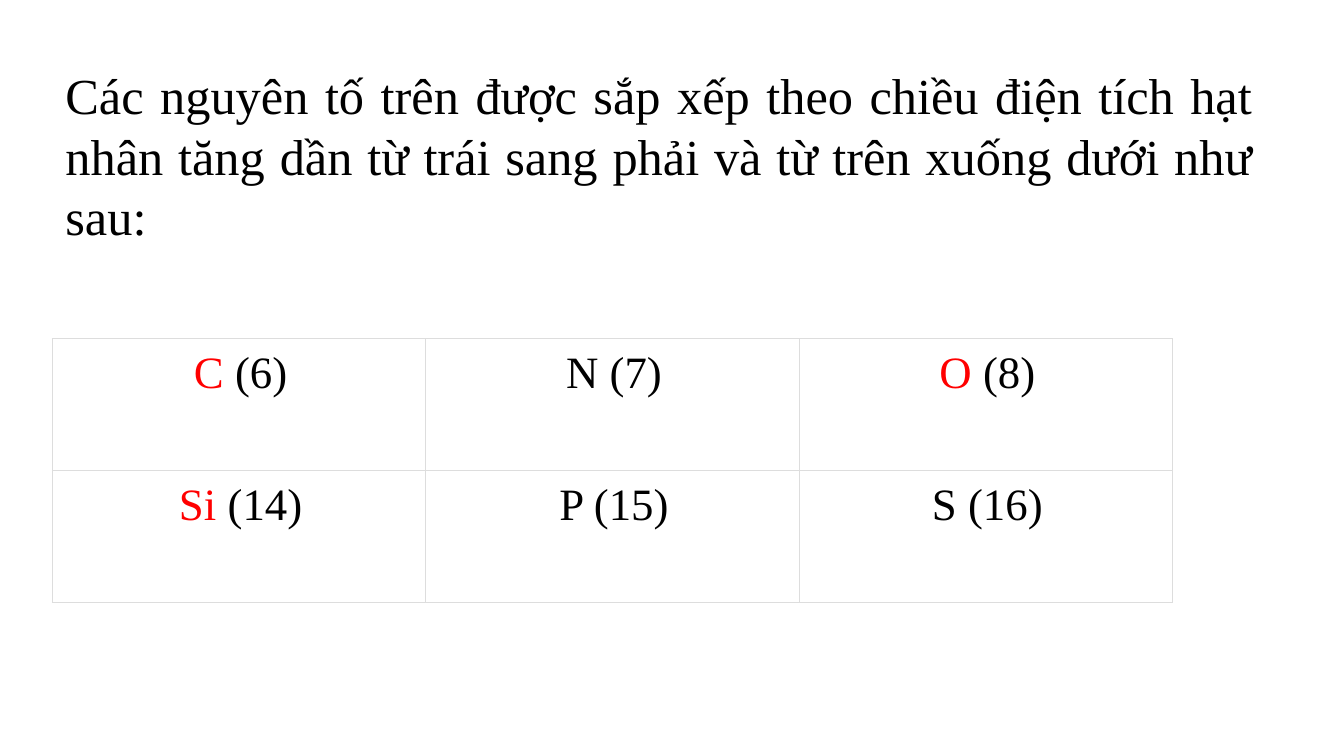
from dataclasses import dataclass

from lxml import etree
from pptx import Presentation
from pptx import util as u
from pptx.dml.color import RGBColor
from pptx.enum import text
from pptx.oxml import ns


@dataclass(frozen=True)
class Theme:
    font: str = "Times New Roman"
    ink: str = "000000"
    accent: str = "FF0000"
    border: str = "DDDDDD"
    border_width: float = 1
    body_size: int = 36
    cell_size: int = 32


class SlideBuilder:
    def __init__(self, slide, theme):
        self.slide = slide
        self.theme = theme

    def style_run(self, r, size, color):
        r.font.name = self.theme.font
        r.font.size = u.Pt(size)
        r.font.color.rgb = RGBColor.from_string(color)

    def paragraph_box(self, content, left, top, width, height):
        box = self.slide.shapes.add_textbox(
            u.Inches(left), u.Inches(top), u.Inches(width), u.Inches(height))
        tf = box.text_frame
        tf.word_wrap = True
        tf.auto_size = text.MSO_AUTO_SIZE.SHAPE_TO_FIT_TEXT
        tf.vertical_anchor = text.MSO_ANCHOR.MIDDLE
        tf.text = content
        p = tf.paragraphs[0]
        p.alignment = text.PP_ALIGN.JUSTIFY
        self.style_run(p.runs[0], self.theme.body_size, self.theme.ink)

    def cell_borders(self, cell):
        tc_pr = cell._tc.get_or_add_tcPr()
        for i, side in enumerate(("lnL", "lnR", "lnT", "lnB")):
            ln = etree.Element(ns.qn(f"a:{side}"), w=str(u.Pt(self.theme.border_width)))
            fill = etree.SubElement(ln, ns.qn("a:solidFill"))
            etree.SubElement(fill, ns.qn("a:srgbClr"), val=self.theme.border)
            tc_pr.insert(i, ln)

    def element_cell(self, cell, symbol, number, highlighted):
        cell.margin_left = cell.margin_right = u.Inches(0.06)
        cell.margin_top = cell.margin_bottom = u.Inches(0.06)
        cell.fill.background()
        self.cell_borders(cell)
        p = cell.text_frame.paragraphs[0]
        p.alignment = text.PP_ALIGN.CENTER
        p.line_spacing = 1.07
        p.space_after = u.Pt(12)
        p._p.get_or_add_pPr().set("marL", str(u.Inches(0.03)))
        if highlighted:
            parts = [(symbol, self.theme.accent), (f" ({number})", self.theme.ink)]
        else:
            parts = [(f"{symbol} ({number})", self.theme.ink)]
        for content, color in parts:
            r = p.add_run()
            r.text = content
            self.style_run(r, self.theme.cell_size, color)

    def element_table(self, rows, left, top, width, height):
        table = self.slide.shapes.add_table(
            len(rows), len(rows[0]), u.Inches(left), u.Inches(top),
            u.Inches(width), u.Inches(height)).table
        table.first_row = False
        table.horz_banding = False
        for i, row in enumerate(rows):
            for j, element in enumerate(row):
                self.element_cell(table.cell(i, j), *element)


ELEMENTS = [
    [("C", 6, True), ("N", 7, False), ("O", 8, True)],
    [("Si", 14, True), ("P", 15, False), ("S", 16, False)],
]


def main():
    prs = Presentation()
    prs.slide_width = u.Inches(13.33)
    prs.slide_height = u.Inches(7.5)
    s = SlideBuilder(prs.slides.add_slide(prs.slide_layouts[6]), Theme())
    s.element_table(ELEMENTS, 0.52, 3.36, 11.11, 2.62)
    s.paragraph_box(
        "Các nguyên tố trên được sắp xếp theo chiều điện tích hạt nhân tăng dần "
        "từ trái sang phải và từ trên xuống dưới như sau:",
        0.55, 0.58, 11.98, 1.92)
    prs.save("out.pptx")


if __name__ == "__main__":
    main()
